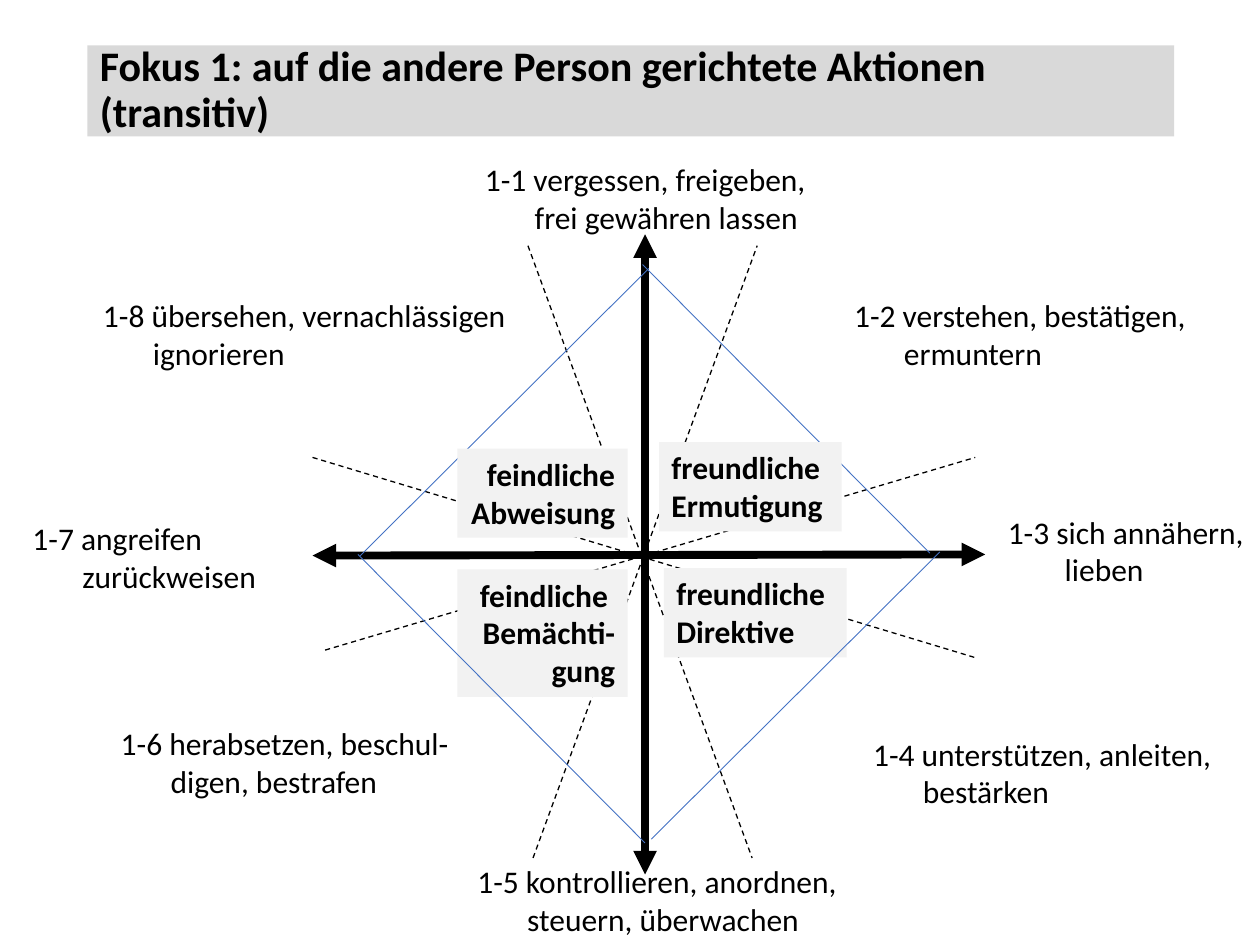
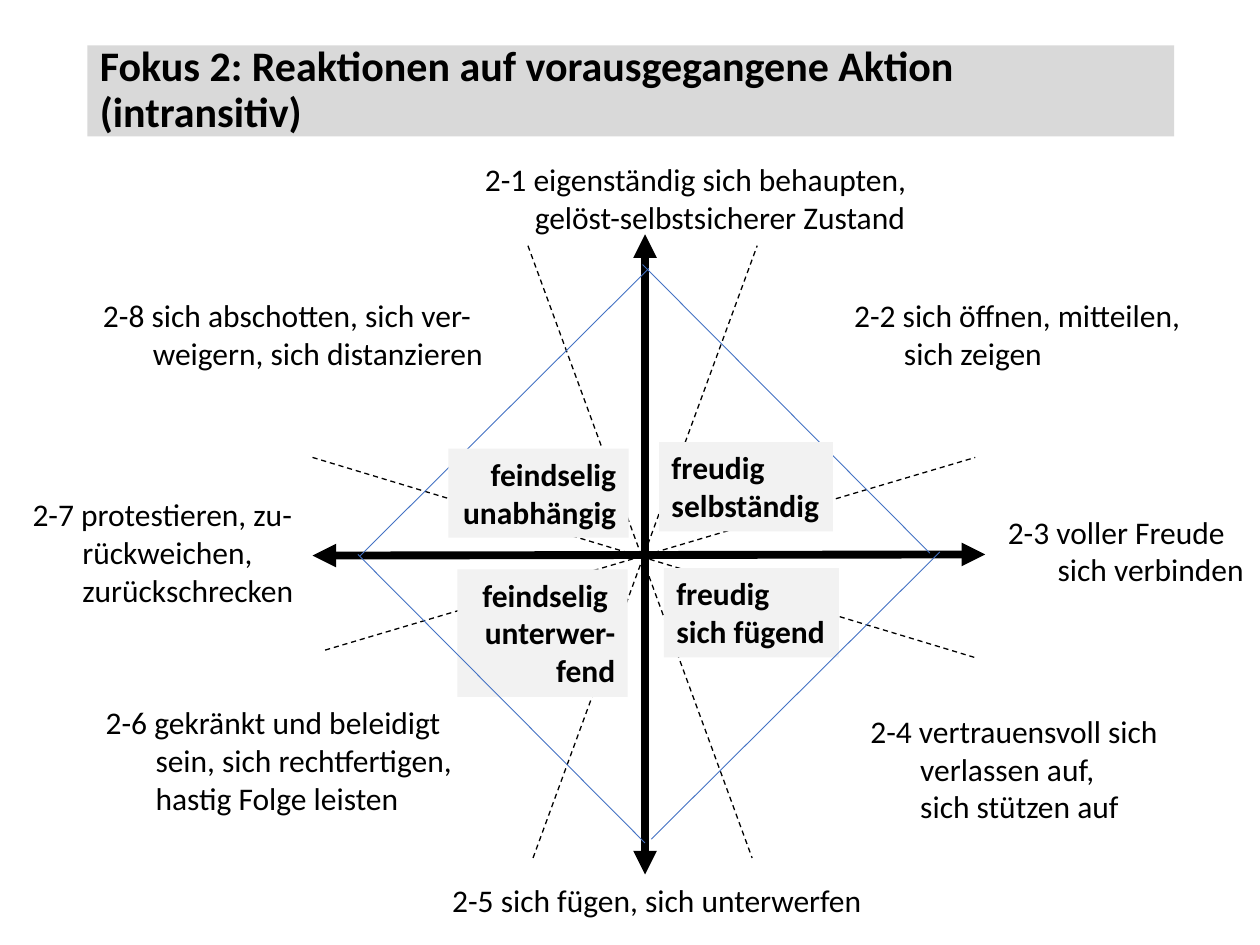
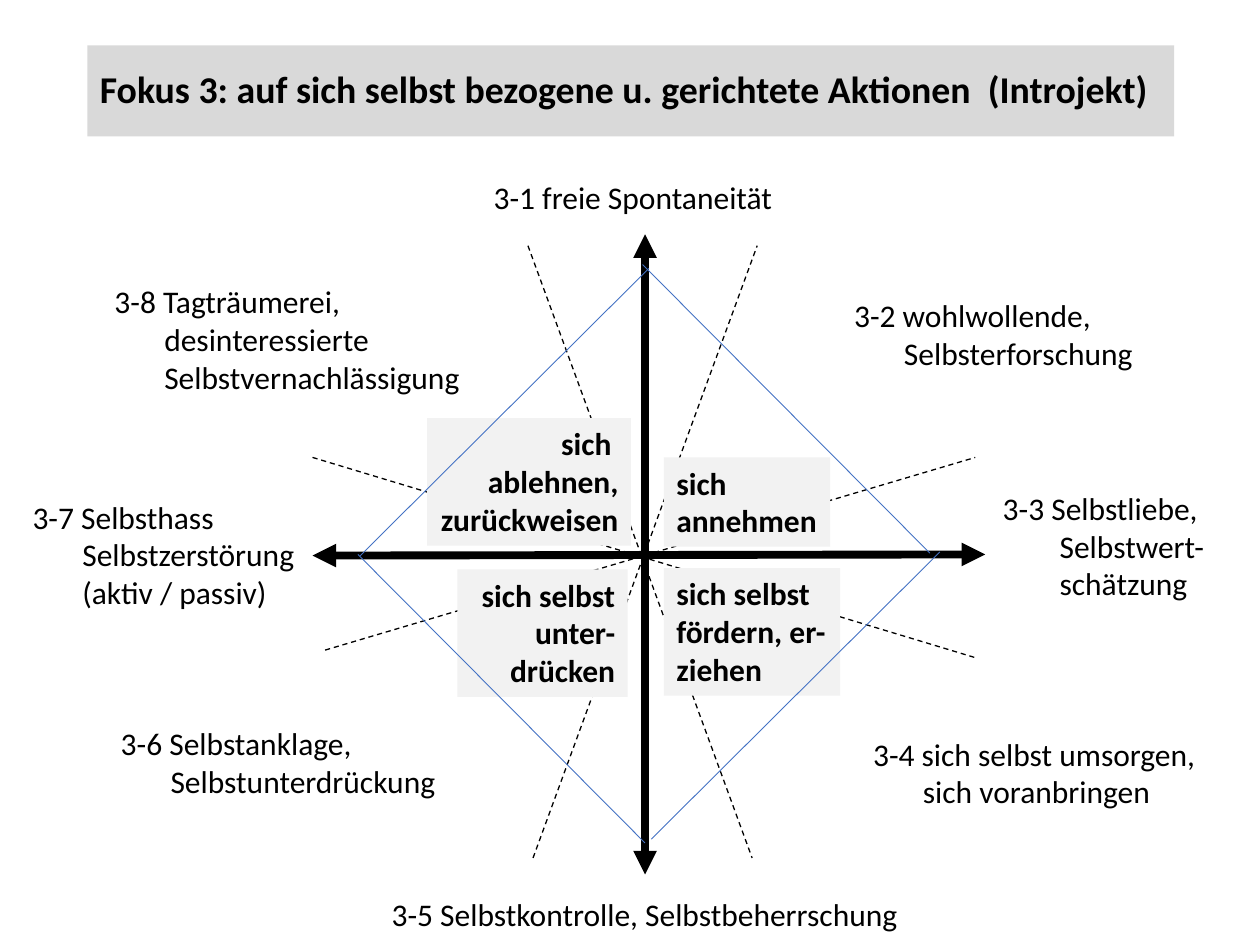
from pptx import Presentation
from pptx.dml.color import RGBColor
from pptx.enum.dml import MSO_LINE
from pptx.enum.shapes import MSO_CONNECTOR
from pptx.enum.text import MSO_ANCHOR, MSO_AUTO_SIZE as Fit, PP_ALIGN as Align
from pptx.oxml.ns import qn
from pptx.util import Pt
from lxml.etree import SubElement

BLACK, BLUE, BAND, PANEL = "000000", "4472C4", "D9D9D9", "F2F2F2"
INDENT, WIDE_INDENT = 28.5, 32.5

AXES = [(178.6, 317.5, 563, 316.8), (368.6, 133.9, 368.6, 499.7)]
SECTOR_LINES = [
    (178.6, 261.4, 557.3, 375.8),
    (185.8, 371.5, 557.3, 261.4),
    (304.6, 490.3, 432.7, 140.4),
    (301.7, 140.4, 429.8, 490.3),
]
DIAMOND = {
    "upper left": (205.9, 317.5, 370.8, 153.4),
    "upper right": (367.2, 151.2, 531.4, 316.1),
    "lower left": (368.6, 481.7, 204.5, 316.8),
    "lower right": (372.2, 479.5, 537.1, 315.4),
}

# Labels and quadrants: left, top, width, lines; a label may add its own indent.
FOCUSES = [
    {
        "title": "Fokus 1: auf die andere Person gerichtete Aktionen  (transitiv)",
        "title_size": 24,
        "front": ("lower left", "lower right"),
        "friendly": [
            (376.6, 252.7, 104.4, ["freundliche", "Ermutigung"]),
            (379.4, 324.7, 104.4, ["freundliche", "Direktive"]),
        ],
        "hostile": (261.4, 256.3, 97.2, ["feindliche", "Abweisung"]),
        "hostile_low": ["feindliche ", "Bemächti-", "gung"],
        "labels": [
            (270, 88, 204.5, ["1-1 vergessen, freigeben,", "frei gewähren lassen"]),
            (481, 165.6, 206.6, ["1-2 verstehen, bestätigen,", "ermuntern"]),
            (568.8, 289.4, 151, ["1-3 sich annähern,", "lieben"], WIDE_INDENT),
            (491.8, 416.2, 214.6, ["1-4 unterstützen, anleiten,", "bestärken"]),
            (265.7, 488.9, 226.8, ["1-5 kontrollieren, anordnen,", "steuern, überwachen"]),
            (61.9, 410.4, 207.4, ["1-6 herabsetzen, beschul-", "digen, bestrafen"]),
            (11.5, 293, 144, ["1-7 angreifen", "zurückweisen"]),
            (51.8, 165.6, 256.3, ["1-8 übersehen, vernachlässigen", "ignorieren"]),
        ],
    },
    {
        "title": "Fokus 2: Reaktionen auf vorausgegangene Aktion  (intransitiv)",
        "title_size": 24,
        "front": ("lower left", "lower right"),
        "friendly": [
            (376.6, 252.7, 99.4, ["freudig", "selbständig"]),
            (379.4, 324.7, 100, ["freudig", "sich fügend"]),
        ],
        "hostile": (256.3, 256.3, 103, ["feindselig", "unabhängig"]),
        "hostile_low": ["feindselig ", "unterwer-fend"],
        "labels": [
            (270, 88, 272.2, ["2-1 eigenständig sich behaupten,",
                              "gelöst-selbstsicherer Zustand"]),
            (481, 165.6, 203.8, ["2-2 sich öffnen, mitteilen,", "sich zeigen"]),
            (568.8, 289.4, 151, ["2-3 voller Freude", "sich verbinden"]),
            (490.3, 403.2, 185, ["2-4 vertrauensvoll sich", "verlassen auf,",
                                 "sich stützen auf"]),
            (251.3, 499.7, 255.6, ["2-5 sich fügen, sich unterwerfen"]),
            (53.3, 398.2, 219.6, ["2-6 gekränkt und beleidigt",
                                  "sein, sich rechtfertigen,", "hastig Folge leisten"]),
            (11.5, 279.4, 164.9, ["2-7 protestieren, zu-", "rückweichen,",
                                  "zurückschrecken"]),
            (51.8, 165.6, 234.7, ["2-8 sich abschotten, sich ver-",
                                  "weigern, sich distanzieren"]),
        ],
    },
    {
        "title": "Fokus 3: auf sich selbst bezogene u. gerichtete Aktionen  (Introjekt)",
        "title_size": 21.6,
        "front": ("lower left", "lower right", "upper left"),
        "friendly": [
            (379.4, 261.4, 95, ["sich", "annehmen"]),
            (379.4, 324.7, 100.8, ["sich selbst", "fördern, er-", "ziehen"]),
        ],
        "hostile": (244, 239, 116.6, ["sich ", "ablehnen,", "zurückweisen"]),
        "hostile_low": ["sich selbst unter-drücken"],
        "labels": [
            (275, 97.9, 175.7, ["3-1 freie Spontaneität"]),
            (481, 165.6, 175.7, ["3-2 wohlwollende,", "Selbsterforschung"]),
            (565.9, 275.8, 136.8, ["3-3 Selbstliebe,", "Selbstwert-", "schätzung"],
             WIDE_INDENT),
            (491.8, 416.2, 205.2, ["3-4 sich selbst umsorgen,", "sich voranbringen"]),
            (216.7, 507.6, 311, ["3-5 Selbstkontrolle, Selbstbeherrschung"]),
            (61.9, 410.4, 196.6, ["3-6 Selbstanklage,", "Selbstunterdrückung"]),
            (11.5, 280.8, 172.1, ["3-7 Selbsthass", "Selbstzerstörung",
                                  "(aktiv / passiv)"]),
            (58.3, 157.7, 214.6, ["3-8 Tagträumerei,", "desinteressierte",
                                  "Selbstvernachlässigung"]),
        ],
    },
]


def rgb(color):
    return RGBColor.from_string(color)


def apply(target, **values):
    for name, value in values.items():
        setattr(target, name, value)


class Deck:
    font = "Calibri"
    text_size = 18

    def __init__(self):
        self.deck = Presentation()
        apply(self.deck, slide_width=Pt(720), slide_height=Pt(540))
        self.slide = None

    def new_slide(self):
        self.slide = self.deck.slides.add_slide(self.deck.slide_layouts[6])

    def box(self, left, top, width, height, lines, fill=None, frame_format=None,
            line_format=None, indent=0, **font_format):
        """Add a text box; every line after the first is indented."""
        box = self.slide.shapes.add_textbox(*map(Pt, (left, top, width, height)))
        if fill:
            box.fill.solid()
            box.fill.fore_color.rgb = rgb(fill)
        frame = box.text_frame
        apply(frame, **(frame_format or {}))
        for number, line in enumerate(lines):
            paragraph = frame.add_paragraph() if number else frame.paragraphs[0]
            apply(paragraph, **(line_format or {}))
            if number and indent:
                paragraph._p.get_or_add_pPr().set("marL", str(Pt(indent)))
            run = paragraph.add_run()
            run.text = line
            apply(run.font, **{"name": self.font, "size": Pt(self.text_size), **font_format})
            run.font.color.rgb = rgb(BLACK)

    def title(self, text, size):
        self.box(50, 26, 621, 52, [text], BAND,
                 {"word_wrap": True, "vertical_anchor": MSO_ANCHOR.MIDDLE},
                 {"line_spacing": 0.9}, size=Pt(size), bold=True)

    def fitted(self, left, top, width, lines, rows=None, wrap=False, **style):
        """Add a box whose height follows from its number of text rows."""
        height = 7.2 + 21.9 * (rows or len(lines))
        self.box(left, top, width, height, lines,
                 frame_format={"word_wrap": wrap, "auto_size": Fit.SHAPE_TO_FIT_TEXT}, **style)

    def label(self, left, top, width, lines, indent=INDENT):
        self.fitted(left, top, width, lines, indent=indent)

    def quadrant(self, left, top, width, lines, align=Align.LEFT, **layout):
        self.fitted(left, top, width, lines, fill=PANEL, bold=True,
                    line_format={"alignment": align}, **layout)

    def line(self, ends, color, width, dash=None, arrows=False):
        line = self.slide.shapes.add_connector(MSO_CONNECTOR.STRAIGHT, *map(Pt, ends))
        line.line.color.rgb = rgb(color)
        apply(line.line, width=Pt(width), dash_style=dash)
        if arrows:
            for end in ("a:headEnd", "a:tailEnd"):
                SubElement(line.line._get_or_add_ln(), qn(end), type="triangle")
        SubElement(line._element.spPr, qn("a:effectLst"))

    def diamond(self, edges):
        for edge in edges:
            self.line(DIAMOND[edge], BLUE, 0.5)

    def focus(self, content):
        self.new_slide()
        self.title(content["title"], content["title_size"])
        for axis in AXES:
            self.line(axis, BLACK, 4.5, arrows=True)
        for sector_line in SECTOR_LINES:
            self.line(sector_line, BLACK, 0.75, MSO_LINE.DASH)
        self.diamond(edge for edge in DIAMOND if edge not in content["front"])
        for quadrant in content["friendly"]:
            self.quadrant(*quadrant)
        self.quadrant(*content["hostile"], align=Align.RIGHT)
        self.quadrant(261.4, 325.4, 97.2, content["hostile_low"],
                      align=Align.RIGHT, rows=3, wrap=True)
        for label in content["labels"]:
            self.label(*label)
        self.diamond(content["front"])


def main():
    deck = Deck()
    for content in FOCUSES:
        deck.focus(content)
    deck.deck.save("out.pptx")


if __name__ == "__main__":
    main()
